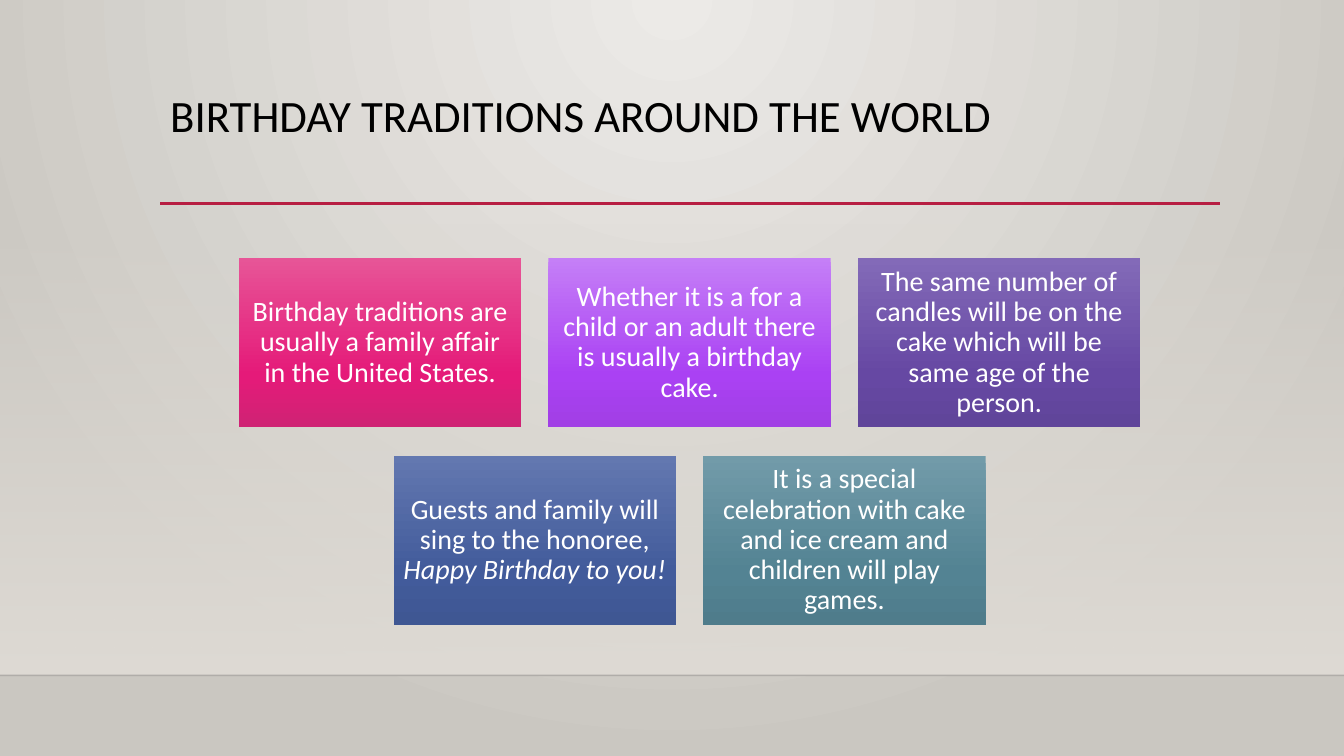
from lxml import etree
from pptx import Presentation
from pptx import util as u
from pptx.dml.color import RGBColor
from pptx.enum import shapes, text
from pptx.oxml import parse_xml
from pptx.oxml.ns import nsdecls, qn

TITLE = "BIRTHDAY TRADITIONS AROUND THE WORLD"
FONT = "Calibri"
ROWS = [
    [
        (["Birthday traditions are usually a family affair in the United States."],
         ("E75597", "E51A79", "CF2374")),
        (["Whether it is a for a child or an adult there is usually a birthday cake."],
         ("C57FF7", "AA41F3", "A13FE5")),
        (["The same number of candles will be on the cake which will be same age of the person."],
         ("836AB8", "6648A3", "60459A")),
    ],
    [
        (["Guests and family will sing to the honoree, ", "Happy Birthday to you!"],
         ("6378B0", "425B9B", "3F5793")),
        (["It is a special celebration with cake and ice cream and children will play games."],
         ("729BA9", "538393", "4F7C8B")),
    ],
]
SLIDE_W, SLIDE_H = 13.33, 7.5
CARD_W, CARD_H = 2.8, 1.68
PITCH_X, PITCH_Y = 3.07, 1.96
CARDS_CENTER, CARDS_TOP = 6.84, 2.56
DOWN = '<a:lin ang="5400000" scaled="0"/>'
FROM_TOP = ('<a:path path="circle"><a:fillToRect l="43000" t="0" '
            'r="43000" b="100000"/></a:path>')


def rgb(value):
    return RGBColor.from_string(value)


def set_gradient(fill, parent, stops, direction):
    fill.solid()
    fill.fore_color.rgb = rgb(stops[0][1])
    marks = "".join(
        f'<a:gs pos="{pos * 1000}"><a:srgbClr val="{color}">'
        f'<a:alpha val="{alpha * 1000}"/></a:srgbClr></a:gs>'
        for pos, color, alpha in stops)
    gradient = parse_xml(f'<a:gradFill {nsdecls("a")} rotWithShape="1">'
                         f'<a:gsLst>{marks}</a:gsLst>{direction}</a:gradFill>')
    parent.replace(parent.find(qn("a:solidFill")), gradient)


def add_rect(s, x, y, w, h, stops):
    sp = s.shapes.add_shape(shapes.MSO_SHAPE.RECTANGLE,
                            *map(u.Inches, (x, y, w, h)))
    sp.shadow.inherit = False
    sp.line.fill.background()
    set_gradient(sp.fill, sp.element.spPr, stops, DOWN)
    return sp


def add_rule(s, x1, x2, y, color, width, alpha=100):
    line = s.shapes.add_connector(shapes.MSO_CONNECTOR.STRAIGHT,
                                  *map(u.Inches, (x1, y, x2, y)))
    line.line.color.rgb = rgb(color)
    line.line.width = u.Pt(width)
    spPr = line.element.spPr
    opacity = etree.SubElement(spPr.find(".//" + qn("a:srgbClr")), qn("a:alpha"))
    opacity.set("val", str(alpha * 1000))
    etree.SubElement(spPr, qn("a:effectLst"))


def write(tf, runs, size, color, align):
    tf.word_wrap = True
    p = tf.paragraphs[0]
    p.alignment = align
    p.line_spacing = 0.9
    p.font.name = FONT
    p.font.size = u.Pt(size)
    p.font.color.rgb = rgb(color)
    for i, words in enumerate(runs):
        r = p.add_run()
        r.text = words
        if i:
            r.font.italic = True


def add_card(s, x, y, runs, colors):
    stops = [(pos, color, 100) for pos, color in zip((0, 69, 100), colors)]
    tf = add_rect(s, x, y, CARD_W, CARD_H, stops).text_frame
    tf.margin_left = tf.margin_right = u.Inches(0.08)
    tf.margin_top = tf.margin_bottom = u.Inches(0.08)
    tf.vertical_anchor = text.MSO_ANCHOR.MIDDLE
    write(tf, runs, 20, "FFFFFF", text.PP_ALIGN.CENTER)


def main():
    prs = Presentation()
    prs.slide_width, prs.slide_height = u.Inches(SLIDE_W), u.Inches(SLIDE_H)
    s = prs.slides.add_slide(prs.slide_layouts[6])
    fill = s.background.fill
    fill.solid()
    set_gradient(fill, s.element.find(".//" + qn("p:bgPr")),
                 [(0, "ECEAE7", 100), (100, "CAC7C1", 100)], FROM_TOP)

    add_rect(s, 0, 2.21, SLIDE_W, 4.49, [(0, "DFDBD5", 0), (100, "DFDBD5", 100)])
    add_rule(s, 0, SLIDE_W, 6.7, "000001", 1, 20)
    add_rule(s, 1.59, 12.1, 2.02, "B71E42", 2.5)

    title = s.shapes.add_textbox(*map(u.Inches, (1.59, 0.88, 10.5, 1.15)))
    write(title.text_frame, [TITLE], 32, "000000", text.PP_ALIGN.LEFT)

    for row, cards in enumerate(ROWS):
        left = CARDS_CENTER - (CARD_W + PITCH_X * (len(cards) - 1)) / 2
        for col, (runs, colors) in enumerate(cards):
            add_card(s, left + col * PITCH_X, CARDS_TOP + row * PITCH_Y, runs, colors)

    prs.save("out.pptx")


if __name__ == "__main__":
    main()
